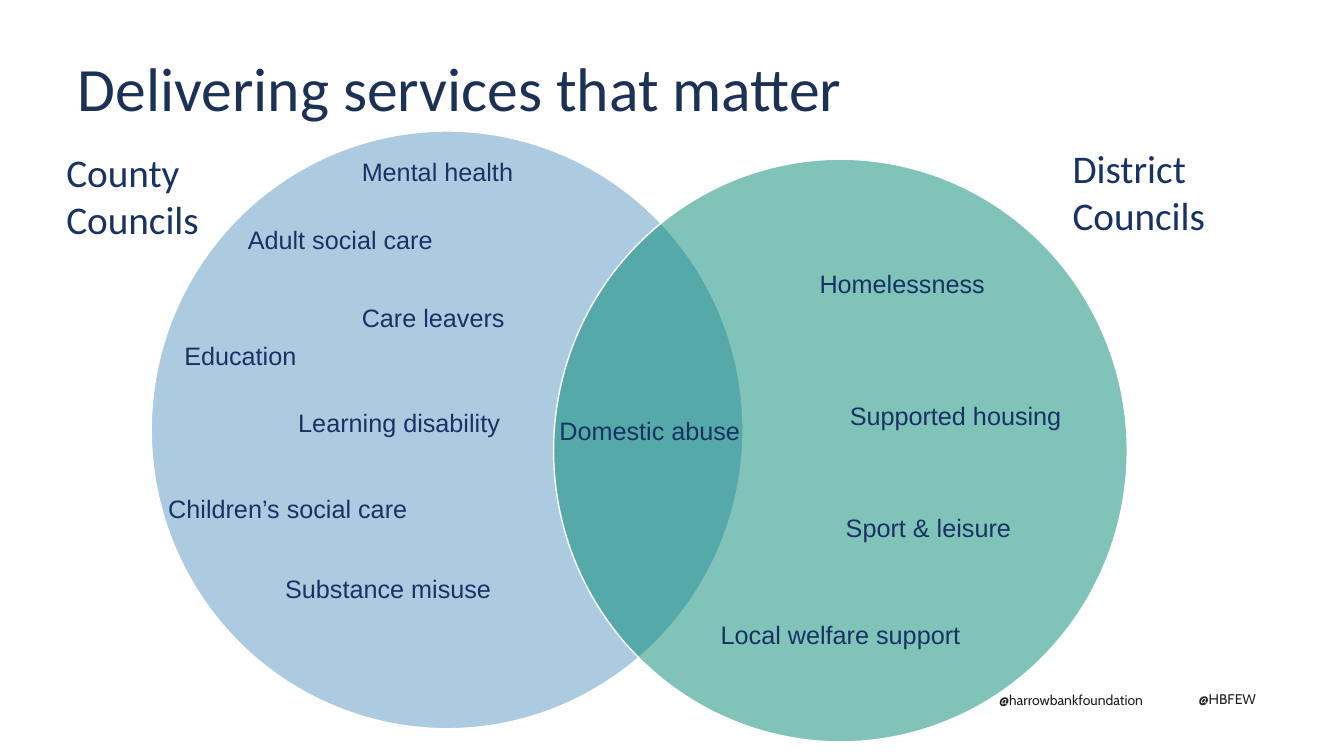
from dataclasses import dataclass

from lxml.etree import SubElement
from pptx import Presentation
from pptx.dml.color import RGBColor
from pptx.enum.shapes import MSO_SHAPE
from pptx.enum.text import MSO_ANCHOR, PP_ALIGN
from pptx.oxml.ns import qn
from pptx.slide import Slide
from pptx.text.text import TextFrame
from pptx.util import Inches, Pt


@dataclass(frozen=True)
class TextStyle:
    font: str
    size: float
    color: str
    line_spacing: float = 1.0


@dataclass(frozen=True)
class Theme:
    title: TextStyle = TextStyle("Calibri", 44, "1C3156", 0.9)
    council: TextStyle = TextStyle("Calibri", 28, "183264")
    service: TextStyle = TextStyle("Arial", 18, "183264")
    handle: TextStyle = TextStyle("Cabin", 10, "232020", 0.5)
    county: str = "5D98C3"
    district: str = "008874"
    outline: str = "FFFFFF"
    opacity: int = 50


@dataclass(frozen=True)
class Circle:
    left: float
    top: float
    width: float
    height: float
    color: str


@dataclass(frozen=True)
class Label:
    text: str
    left: float
    top: float
    width: float = 2.26
    height: float = 0.4
    style: TextStyle = Theme.service


THEME = Theme()

CIRCLES = [
    Circle(1.5, 1.3, 5.87, 5.93, THEME.county),
    Circle(5.49, 1.58, 5.69, 5.78, THEME.district),
]

LABELS = [
    Label("@harrowbankfoundation", 9.81, 6.88, 1.79, 0.2, THEME.handle),
    Label("@HBFEW", 11.79, 6.87, 1.79, 0.2, THEME.handle),
    Label("County Councils", 0.56, 1.42, 1.52, 1.35, THEME.council),
    Label("District Councils", 10.54, 1.38, 2.26, 1.35, THEME.council),
    Label("Mental health", 3.49, 1.5),
    Label("Adult social care", 2.36, 2.18),
    Label("Care leavers", 3.49, 2.95),
    Label("Education", 1.73, 3.33),
    Label("Learning disability", 2.86, 3.99),
    Label("Children’s social care", 1.57, 4.84, 2.92),
    Label("Substance misuse", 2.73, 5.64),
    Label("Domestic abuse", 5.45, 4.07),
    Label("Homelessness", 8.03, 2.61),
    Label("Supported housing", 8.33, 3.92, 2.7),
    Label("Sport & leisure", 8.29, 5.03),
    Label("Local welfare support", 7.05, 6.09, 2.87),
]


def write_text(frame: TextFrame, text: str, style: TextStyle) -> None:
    frame.word_wrap = True
    frame.vertical_anchor = MSO_ANCHOR.TOP
    frame.text = text
    paragraph = frame.paragraphs[0]
    paragraph.alignment = PP_ALIGN.LEFT
    paragraph.line_spacing = style.line_spacing
    font = paragraph.runs[0].font
    for attribute, value in {"name": style.font, "size": Pt(style.size)}.items():
        setattr(font, attribute, value)
    font.color.rgb = RGBColor.from_string(style.color)


def place_title(slide: Slide, text: str) -> None:
    title = slide.shapes.title
    position = {"left": 0.67, "top": 0.51, "width": 8.64, "height": 0.72}
    for attribute, value in position.items():
        setattr(title, attribute, Inches(value))
    write_text(title.text_frame, text, THEME.title)
    title.text_frame.margin_top = Inches(0.07)


def draw_circle(slide: Slide, circle: Circle) -> None:
    """Draw one half-transparent set of the Venn diagram."""
    oval = slide.shapes.add_shape(
        MSO_SHAPE.OVAL, Inches(circle.left), Inches(circle.top),
        Inches(circle.width), Inches(circle.height))
    oval.shadow.inherit = False
    oval.fill.solid()
    oval.fill.fore_color.rgb = RGBColor.from_string(circle.color)
    tint = oval.fill._xPr.find(qn("a:solidFill")).find(qn("a:srgbClr"))
    SubElement(tint, qn("a:alpha"), val=str(THEME.opacity * 1000))
    oval.line.color.rgb = RGBColor.from_string(THEME.outline)
    oval.line.width = Pt(1)


def draw_label(slide: Slide, label: Label) -> None:
    box = slide.shapes.add_textbox(
        Inches(label.left), Inches(label.top),
        Inches(label.width), Inches(label.height))
    write_text(box.text_frame, label.text, label.style)


def main() -> None:
    deck = Presentation()
    deck.slide_width, deck.slide_height = Inches(13.33), Inches(7.5)
    slide = deck.slides.add_slide(deck.slide_layouts[5])
    place_title(slide, "Delivering services that matter")
    for circle in CIRCLES:
        draw_circle(slide, circle)
    for label in LABELS:
        draw_label(slide, label)
    deck.save("out.pptx")


if __name__ == "__main__":
    main()
